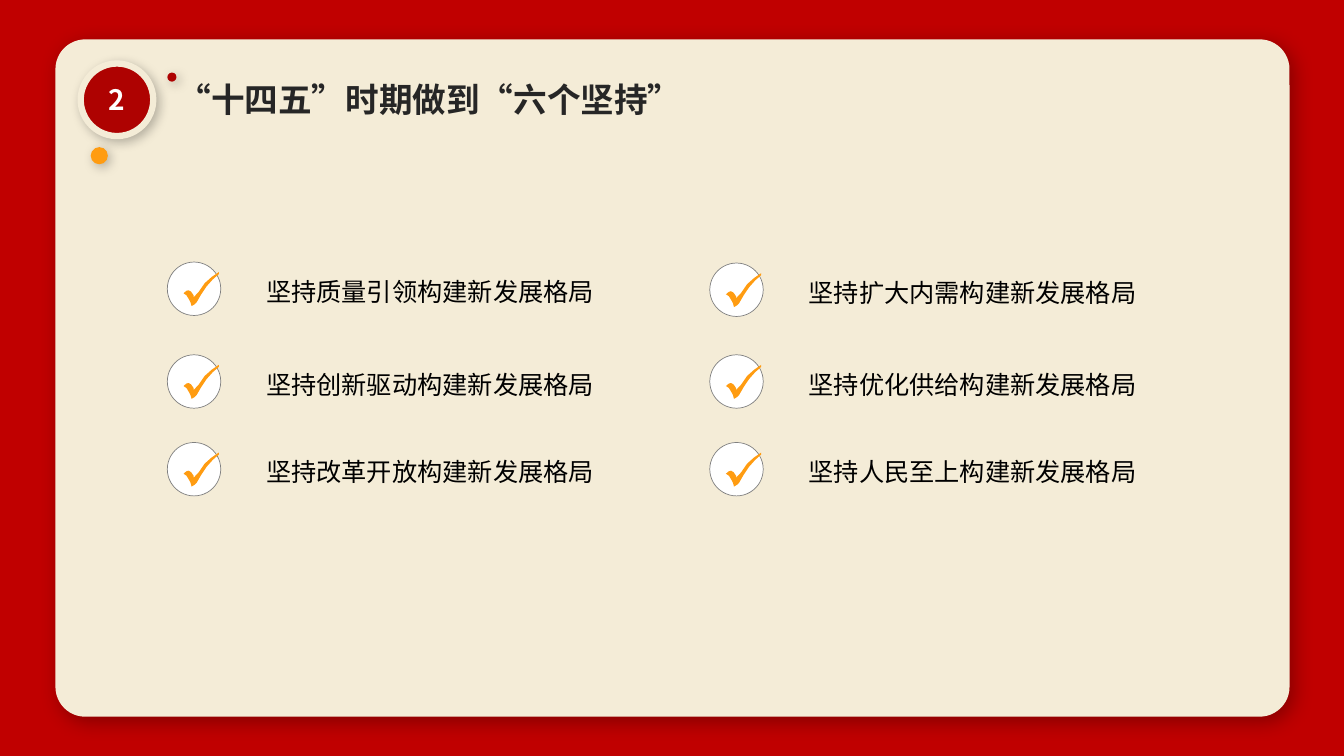
from dataclasses import dataclass

from lxml import etree
from pptx import Presentation
from pptx.dml.color import RGBColor
from pptx.enum import shapes, text
from pptx.oxml import ns
from pptx.util import Inches, Pt

FONT = "Noto Sans CJK SC"
RED, DARK, CREAM, GOLD = "C00000", "AE0201", "F4ECD7", "FF9C11"
OVAL = shapes.MSO_SHAPE.OVAL

# Tick outline in thousandths of an inch
TICK = [(350, 0), (350, 20), (290, 73), (230, 140), (174, 224), (130, 300),
        (110, 320), (80, 337), (70, 300), (60, 280), (30, 230), (0, 210),
        (28, 186), (50, 180), (75, 194), (100, 230), (100, 250), (151, 196),
        (210, 110), (280, 48)]


@dataclass
class Shade:
    alpha: int
    blur: float
    dist: float


@dataclass
class Item:
    left: float
    top: float
    label: str


SOFT = Shade(25, 8, 3)
LEFT, RIGHT = 1.66, 7.04
ITEMS = [
    Item(LEFT, 2.6, "坚持质量引领构建新发展格局"),
    Item(RIGHT, 2.61, "坚持扩大内需构建新发展格局"),
    Item(LEFT, 3.52, "坚持创新驱动构建新发展格局"),
    Item(RIGHT, 3.52, "坚持优化供给构建新发展格局"),
    Item(LEFT, 4.39, "坚持改革开放构建新发展格局"),
    Item(RIGHT, 4.39, "坚持人民至上构建新发展格局"),
]


def color(code: str) -> RGBColor:
    return RGBColor.from_string(code)


def paint(shape, fill: str, line: str = "", width: float = 0) -> None:
    shape.shadow.inherit = False
    shape.fill.solid()
    shape.fill.fore_color.rgb = color(fill)
    if line:
        shape.line.color.rgb = color(line)
        shape.line.width = Pt(width)
    else:
        shape.line.fill.background()


def shade(shape, look: Shade) -> None:
    effects = shape.element.spPr.find(ns.qn("a:effectLst"))
    outer = etree.SubElement(effects, ns.qn("a:outerShdw"), {
        "blurRad": str(Pt(look.blur)), "dist": str(Pt(look.dist)),
        "dir": str(45 * 60000), "algn": "tl", "rotWithShape": "0"})
    tint = etree.SubElement(outer, ns.qn("a:srgbClr"), val="000000")
    etree.SubElement(tint, ns.qn("a:alpha"), val=str(look.alpha * 1000))


def add_run(para, words: str, size: int, code: str, bold: bool = False) -> None:
    run = para.add_run()
    run.text = words
    font = run.font
    font.name, font.size, font.bold = FONT, Pt(size), bold
    font.color.rgb = color(code)
    props = run._r.get_or_add_rPr()
    props.set("lang", "zh-CN")
    latin = props.find(ns.qn("a:latin"))
    latin.addnext(etree.Element(ns.qn("a:ea"), typeface=FONT))


def add_oval(slide, left: float, top: float, size: float):
    return slide.shapes.add_shape(
        OVAL, Inches(left), Inches(top), Inches(size), Inches(size))


def add_item(slide, item: Item) -> None:
    # Label
    box = slide.shapes.add_textbox(
        Inches(item.left + 0.98), Inches(item.top - 0.01), Inches(3.6), Inches(0.45))
    frame = box.text_frame
    frame.word_wrap = True
    frame.auto_size = text.MSO_AUTO_SIZE.SHAPE_TO_FIT_TEXT
    frame.margin_left = frame.margin_right = 0
    frame.margin_top = frame.margin_bottom = 0
    para = frame.paragraphs[0]
    para.alignment = text.PP_ALIGN.JUSTIFY
    para.line_spacing = 1.5
    add_run(para, item.label, 18, "000000")

    # Circle and tick
    paint(add_oval(slide, item.left, item.top, 0.53), "FFFFFF", "808080", 0.5)
    pen = slide.shapes.build_freeform(*TICK[0], scale=Inches(1) / 1000)
    pen.add_line_segments(TICK[1:], close=True)
    tick = pen.convert_to_shape(Inches(item.left + 0.16), Inches(item.top + 0.1))
    paint(tick, GOLD)


def main() -> None:
    deck = Presentation()
    deck.slide_width, deck.slide_height = Inches(13.33), Inches(7.5)
    slide = deck.slides.add_slide(deck.slide_layouts[5])

    # Backdrop and panel
    back = slide.background.fill
    back.solid()
    back.fore_color.rgb = color(RED)
    panel = slide.shapes.add_shape(
        shapes.MSO_SHAPE.ROUNDED_RECTANGLE,
        Inches(0.55), Inches(0.39), Inches(12.24), Inches(6.72))
    panel.adjustments[0] = 0.044
    paint(panel, CREAM)
    shade(panel, Shade(30, 15, 5))

    # Dots beside the badge
    for left, top, size, code in [(0.9, 1.46, 0.17, GOLD), (1.66, 0.72, 0.09, DARK)]:
        dot = add_oval(slide, left, top, size)
        paint(dot, code)
        shade(dot, SOFT)

    # Six points
    for item in ITEMS:
        add_item(slide, item)

    # Title, brought in front of the panel
    title = slide.shapes.title
    title.left, title.top = Inches(1.66), Inches(0.73)
    title.width, title.height = Inches(5.53), Inches(0.5)
    frame = title.text_frame
    frame.word_wrap = True
    frame.auto_size = text.MSO_AUTO_SIZE.SHAPE_TO_FIT_TEXT
    frame.vertical_anchor = text.MSO_ANCHOR.TOP
    frame.paragraphs[0].alignment = text.PP_ALIGN.LEFT
    add_run(frame.paragraphs[0], "“十四五”时期做到“六个坚持”", 24, "262626", True)
    slide.shapes.element.append(title.element)

    # Number badge
    badge = add_oval(slide, 0.8, 0.63, 0.72)
    paint(badge, DARK, CREAM, 4.5)
    shade(badge, SOFT)
    frame = badge.text_frame
    frame.word_wrap = False
    frame.vertical_anchor = text.MSO_ANCHOR.MIDDLE
    frame.paragraphs[0].alignment = text.PP_ALIGN.CENTER
    add_run(frame.paragraphs[0], "2", 20, "FFFFFF", True)

    deck.save("out.pptx")


if __name__ == "__main__":
    main()
